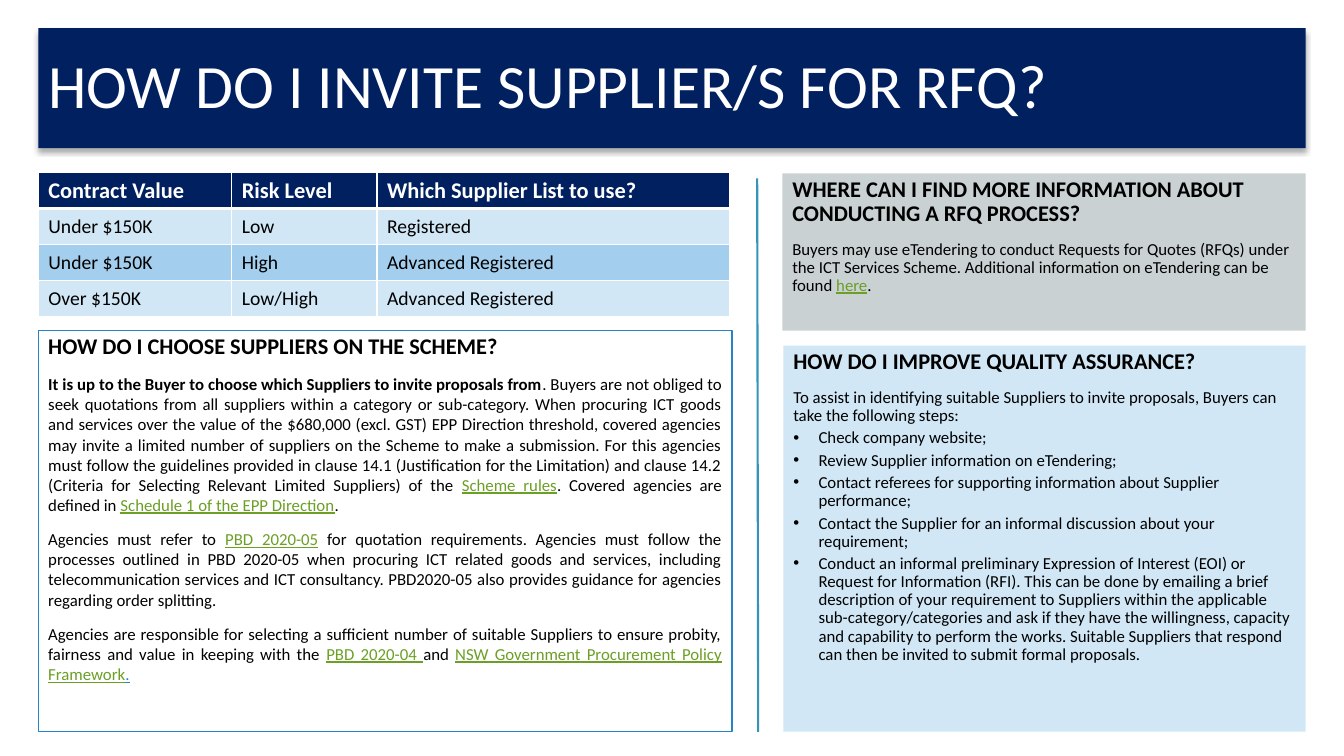
from lxml.etree import SubElement
from pptx import Presentation
from pptx.dml.color import RGBColor
from pptx.enum.shapes import MSO_CONNECTOR as Connector, MSO_SHAPE as Shape
from pptx.enum.text import MSO_ANCHOR as Anchor, MSO_AUTO_SIZE as AutoSize, PP_ALIGN as Align
from pptx.oxml import parse_xml
from pptx.oxml.ns import nsdecls, qn
from pptx.util import Inches, Pt

NAVY = RGBColor(0x00, 0x20, 0x60)
WHITE = RGBColor(0xFF, 0xFF, 0xFF)
BLACK = RGBColor(0x00, 0x00, 0x00)
GREY = RGBColor(0xCA, 0xD1, 0xD2)
PALE_BLUE = RGBColor(0xD1, 0xE7, 0xF6)
MID_BLUE = RGBColor(0xA3, 0xCE, 0xED)
BORDER_BLUE = RGBColor(0x26, 0x83, 0xC6)
TEAL = RGBColor(0x34, 0x94, 0xBA)
LINK_GREEN = RGBColor(0x6B, 0x9F, 0x25)
FONT = "Calibri"

STYLES = {
    "plain": (BLACK, False, False),
    "bold": (BLACK, True, False),
    "link": (LINK_GREEN, False, True),
    "link end": (BORDER_BLUE, False, True),
}

SUPPLIER_LISTS = [
    ("Contract Value", "Risk Level", "Which Supplier List to use?"),
    ("Under $150K", "Low", "Registered"),
    ("Under $150K", "High", "Advanced Registered"),
    ("Over $150K", "Low/High", "Advanced Registered"),
]

CHOOSING = [
    [
        ("It is up to the Buyer to choose which Suppliers to invite proposals from", "bold"),
        (". Buyers are not obliged to seek quotations from all suppliers within a category or "
         "sub-category. When procuring ICT goods and services over the value of the $680,000 "
         "(excl. GST) EPP Direction threshold, covered agencies may invite a limited number of "
         "suppliers on the Scheme to make a submission. For this agencies must follow the "
         "guidelines provided in clause 14.1 (Justification for the Limitation) and clause 14.2 "
         "(Criteria for Selecting Relevant Limited Suppliers) of the ", "plain"),
        ("Scheme rules", "link"),
        (". Covered agencies are defined in ", "plain"),
        ("Schedule 1 of the EPP Direction", "link"),
        (".", "plain"),
    ],
    [
        ("Agencies must refer to ", "plain"),
        ("PBD 2020-05", "link"),
        (" for quotation requirements. Agencies must follow the processes outlined in PBD 2020-05 "
         "when procuring ICT related goods and services, including telecommunication services and "
         "ICT consultancy. PBD2020-05 also provides guidance for agencies regarding order "
         "splitting.", "plain"),
    ],
    [
        ("Agencies are responsible for selecting a sufficient number of suitable Suppliers to "
         "ensure probity, fairness and value in keeping with the ", "plain"),
        ("PBD 2020-04 ", "link"),
        ("and ", "plain"),
        ("NSW Government Procurement Policy Framework", "link"),
        (".", "link end"),
    ],
]

MORE_INFORMATION = [
    ("Buyers may use eTendering to conduct Requests for Quotes (RFQs) under the ICT Services "
     "Scheme. Additional information on eTendering can be found ", "plain"),
    ("here", "link"),
    (".", "plain"),
]

QUALITY_INTRO = ("To assist in identifying suitable Suppliers to invite proposals, "
                 "Buyers can take the following steps:")
QUALITY_STEPS = [
    "Check company website;",
    "Review Supplier information on eTendering;",
    "Contact referees for supporting information about Supplier performance;",
    "Contact the Supplier for an informal discussion about your requirement;",
    "Conduct an informal preliminary Expression of Interest (EOI) or Request for Information "
    "(RFI). This can be done by emailing a brief description of your requirement to Suppliers "
    "within the applicable sub-category/categories and ask if they have the willingness, capacity "
    "and capability to perform the works. Suitable Suppliers that respond can then be invited to "
    "submit formal proposals.",
]


def format_font(font, size, color, bold=False, underline=False):
    """Set the face, size, colour and emphasis of a font."""
    font.name, font.size, font.bold, font.underline = FONT, Pt(size), bold, underline
    font.color.rgb = color


def write_parts(paragraph, parts, size=12):
    """Write (text, style) parts into a paragraph."""
    paragraph.alignment = Align.LEFT
    for text, style in parts:
        run = paragraph.add_run()
        run.text = text
        format_font(run.font, size, *STYLES[style])


def add_title(slide, left, top, width, height):
    """Turn the title placeholder into the navy banner."""
    title = slide.shapes.title
    title.left, title.top, title.width, title.height = map(Inches, (left, top, width, height))
    title.fill.solid()
    title.fill.fore_color.rgb = NAVY
    title._element.spPr.append(parse_xml(
        f'<a:effectLst {nsdecls("a")}><a:outerShdw blurRad="44450" dist="27940" dir="5400000">'
        '<a:srgbClr val="000000"><a:alpha val="32000"/></a:srgbClr></a:outerShdw></a:effectLst>'))
    frame = title.text_frame
    frame.text = "HOW DO I INVITE SUPPLIER/S FOR RFQ?"
    frame.word_wrap, frame.auto_size = True, AutoSize.NONE
    frame.vertical_anchor = Anchor.MIDDLE
    heading = frame.paragraphs[0]
    heading.alignment, heading.line_spacing = Align.LEFT, 0.9
    format_font(heading.runs[0].font, 44, WHITE)


def add_panel(slide, left, top, width, height, fill, heading, border=None):
    """Add a filled panel with its heading and return its text frame."""
    panel = slide.shapes.add_shape(Shape.RECTANGLE, *map(Inches, (left, top, width, height)))
    panel.shadow.inherit = False
    panel.fill.solid()
    panel.fill.fore_color.rgb = fill
    if border is None:
        panel.line.fill.background()
    else:
        panel.line.color.rgb, panel.line.width = border, Pt(1)
    frame = panel.text_frame
    frame.word_wrap, frame.vertical_anchor = True, Anchor.TOP
    frame.paragraphs[0].line_spacing = 0.9
    write_parts(frame.paragraphs[0], [(heading, "bold")], 16)
    return frame


def add_information(slide, left, top, width, height):
    """Add the panel on where to find more information."""
    frame = add_panel(slide, left, top, width, height, GREY,
                      "WHERE CAN I FIND MORE INFORMATION ABOUT CONDUCTING A RFQ PROCESS?")
    body = frame.add_paragraph()
    body.line_spacing, body.space_before = 0.9, Pt(10)
    write_parts(body, MORE_INFORMATION)


def add_quality(slide, left, top, width, height):
    """Add the quality assurance panel with its bulleted steps."""
    frame = add_panel(slide, left, top, width, height, PALE_BLUE,
                      "HOW DO I IMPROVE QUALITY ASSURANCE?")
    for index, text in enumerate([QUALITY_INTRO, *QUALITY_STEPS]):
        step = frame.add_paragraph()
        if index:
            properties = step._p.get_or_add_pPr()
            properties.set("marL", str(Inches(0.25)))
            properties.set("indent", str(-Inches(0.25)))
            SubElement(properties, qn("a:buFont")).set("typeface", "Arial")
            SubElement(properties, qn("a:buChar")).set("char", "•")
        step.line_spacing, step.space_after = 0.9, Pt(3)
        step.space_before = Pt(0 if index else 10)
        write_parts(step, [(text, "plain")])


def add_choosing(slide, left, top, width, height):
    """Add the outlined panel on choosing suppliers."""
    frame = add_panel(slide, left, top, width, height, WHITE,
                      "HOW DO I CHOOSE SUPPLIERS ON THE SCHEME?", BORDER_BLUE)
    for parts in CHOOSING:
        body = frame.add_paragraph()
        body.space_before = Pt(10)
        write_parts(body, parts)
        body.alignment = Align.JUSTIFY


def add_supplier_table(slide, left, top, width, height):
    """Add the table of supplier lists by contract value and risk."""
    table = slide.shapes.add_table(len(SUPPLIER_LISTS), 3,
                                   *map(Inches, (left, top, width, height))).table
    for column, column_width in zip(table.columns, (1.92, 1.44, 3.5)):
        column.width = Inches(column_width)
    fills = (NAVY, PALE_BLUE, MID_BLUE, PALE_BLUE)
    for row, (texts, fill) in enumerate(zip(SUPPLIER_LISTS, fills)):
        for column, text in enumerate(texts):
            cell = table.cell(row, column)
            cell.text = text
            cell.margin_top = cell.margin_bottom = Inches(0.03)
            cell.vertical_anchor = Anchor.MIDDLE
            font = cell.text_frame.paragraphs[0].runs[0].font
            if row == 0:
                format_font(font, 16, WHITE, bold=True)
                cell._tc.get_or_add_tcPr().append(parse_xml(
                    f'<a:lnB {nsdecls("a")} w="25400"><a:solidFill><a:srgbClr val="{WHITE}"/>'
                    '</a:solidFill></a:lnB>'))
            else:
                format_font(font, 14, BLACK)
            cell.fill.solid()
            cell.fill.fore_color.rgb = fill


def add_divider(slide, left, top, width, height):
    """Add the line between the two columns."""
    divider = slide.shapes.add_connector(
        Connector.STRAIGHT, *map(Inches, (left, top, left + width, top + height)))
    divider.line.color.rgb, divider.line.width = TEAL, Pt(1.5)
    SubElement(divider._element.spPr, qn("a:effectLst"))


def main():
    """Build and save the slide."""
    deck = Presentation()
    deck.slide_width, deck.slide_height = Inches(13.33), Inches(7.5)
    slide = deck.slides.add_slide(deck.slide_layouts.get_by_name("Title Only"))
    add_title(slide, 0.38, 0.28, 12.57, 1.19)
    add_information(slide, 7.76, 1.72, 5.19, 1.56)
    add_quality(slide, 7.77, 3.43, 5.18, 3.83)
    add_choosing(slide, 0.38, 3.28, 6.88, 3.98)
    add_divider(slide, 7.51, 1.77, 0.01, 5.49)
    add_supplier_table(slide, 0.38, 1.71, 6.86, 1.43)
    deck.save("out.pptx")


if __name__ == "__main__":
    main()
